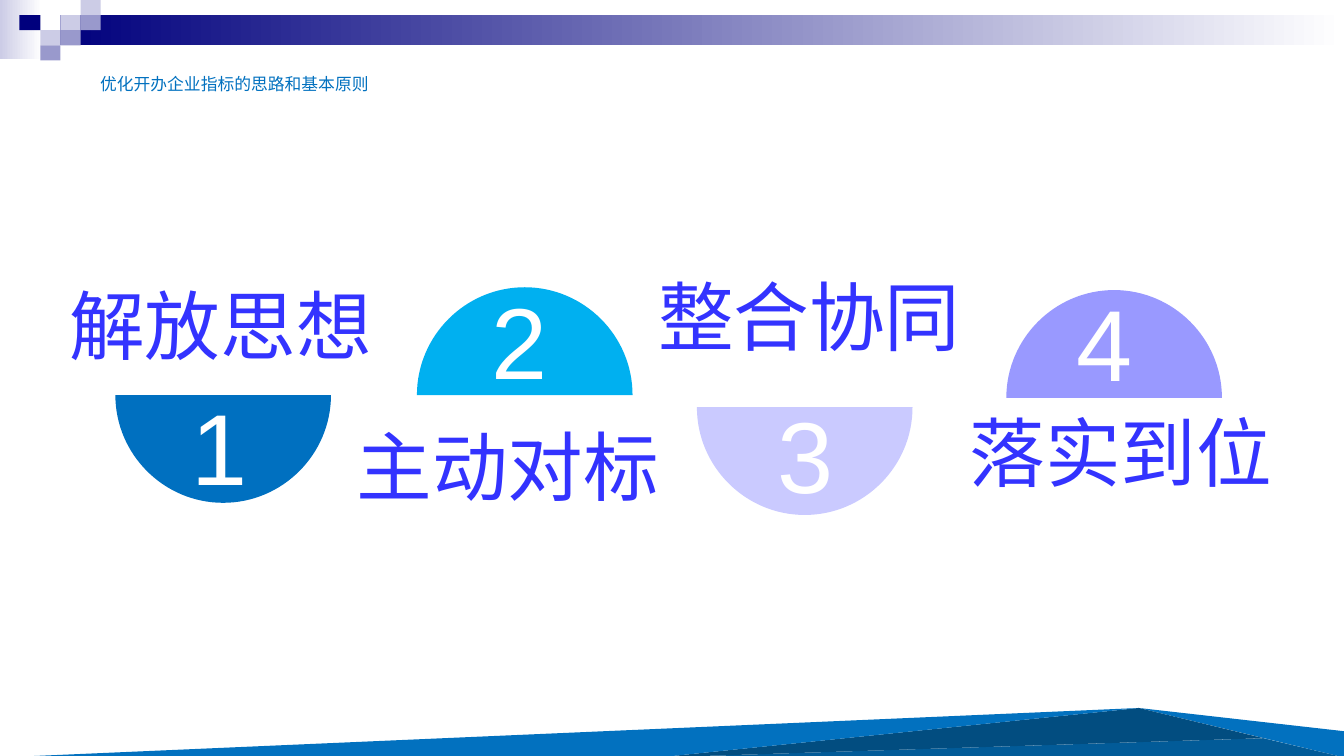
from collections import namedtuple

from lxml import etree
from pptx import Presentation
from pptx.dml.color import RGBColor
from pptx.enum import shapes, text
from pptx.oxml import ns
from pptx.util import Pt

WIDTH, HEIGHT = 960, 540
NAVY = RGBColor(0x00, 0x00, 0x7D)
LAVENDER = RGBColor(0xCC, 0xCC, 0xE6)
VIOLET = RGBColor(0x99, 0x99, 0xCC)
WHITE = RGBColor(0xFF, 0xFF, 0xFF)
RIDGE_BLUE = RGBColor(0x02, 0x71, 0xBF)
RIDGE_MID = RGBColor(0x02, 0x5B, 0x98)
RIDGE_DARK = RGBColor(0x02, 0x4D, 0x80)
LABEL_BLUE = RGBColor(0x33, 0x33, 0xFF)

CJK_FONT, DIGIT_FONT = "Noto Sans CJK SC", "Arial"
RADIUS = 77
ARC_HANDLE = 0.55 * RADIUS

# x, y: left end of the dome's flat edge; offsets are measured from there
Step = namedtuple("Step", "label x y upward color label_offset digit_offset")
STEPS = [
    Step("解放思想", 82.4, 282.2, False, RGBColor(0x00, 0x70, 0xC0),
         (-39.9, -86.6), (47.2, -11)),
    Step("主动对标", 297.8, 282.2, True, RGBColor(0x00, 0xB0, 0xF0),
         (-50.1, 14.2), (46.1, -86.4)),
    Step("整合协同", 497.8, 290.9, False, RGBColor(0xCA, 0xCA, 0xFF),
         (-34.8, -101.8), (50.8, -13.7)),
    Step("落实到位", 718.8, 284.2, True, RGBColor(0x99, 0x99, 0xFF),
         (-33.4, 2.4), (43, -87.6)),
]


def paint(shape, color, end_color=None):
    """Fill flat, or left to right when an end colour is given."""
    shape.shadow.inherit = False
    shape.line.fill.background()
    if end_color is None:
        shape.fill.solid()
        shape.fill.fore_color.rgb = color
        return
    shape.fill.gradient()
    shape.fill.gradient_angle = 0
    for stop, position, tint in zip(shape.fill.gradient_stops, (0, 1), (color, end_color)):
        stop.position = position
        stop.color.rgb = tint


def add_block(parent, x, y, width, height, color, end_color=None):
    block = parent.shapes.add_shape(
        shapes.MSO_SHAPE.RECTANGLE, Pt(x), Pt(y), Pt(width), Pt(height))
    paint(block, color, end_color)


def add_polygon(parent, points, color):
    start, *rest = [(Pt(x), Pt(y)) for x, y in points]
    builder = parent.shapes.build_freeform(*start)
    builder.add_line_segments(rest, close=True)
    polygon = builder.convert_to_shape()
    paint(polygon, color)
    return polygon


def add_dome(parent, x, y, upward, color):
    """Half-disc: a triangle whose two slopes become quarter circles."""
    side = -1 if upward else 1
    dome = add_polygon(parent, [(x, y), (x + 2 * RADIUS, y), (x + RADIUS, y + side * RADIUS)],
                       color)
    flat, apex = (RADIUS, 0) if upward else (0, RADIUS)
    quarters = [
        [(2 * RADIUS, flat + side * ARC_HANDLE), (RADIUS + ARC_HANDLE, apex), (RADIUS, apex)],
        [(RADIUS - ARC_HANDLE, apex), (0, flat + side * ARC_HANDLE), (0, flat)],
    ]
    outline = dome._element.find(".//" + ns.qn("a:path"))
    slope = outline.findall(ns.qn("a:lnTo"))[-1]
    for quarter in quarters:
        curve = etree.Element(ns.qn("a:cubicBezTo"))
        for curve_x, curve_y in quarter:
            etree.SubElement(curve, ns.qn("a:pt"), x=str(int(Pt(curve_x))), y=str(int(Pt(curve_y))))
        slope.addprevious(curve)
    outline.remove(slope)


def add_words(parent, x, y, width, height, words, size, font, color, wrap=False):
    box = parent.shapes.add_textbox(Pt(x), Pt(y), Pt(width), Pt(height))
    frame = box.text_frame
    frame.word_wrap = wrap
    frame.auto_size = text.MSO_AUTO_SIZE.SHAPE_TO_FIT_TEXT
    run = frame.paragraphs[0].add_run()
    run.text = words
    run.font.size = Pt(size)
    run.font.name = font
    run.font.color.rgb = color
    east_asian = etree.SubElement(run.font._element, ns.qn("a:ea"))
    east_asian.set("typeface", font)


def add_header(slide, x, y, width):
    """Fading bar with a mosaic of small tiles at its left end."""
    header = slide.shapes.add_group_shape()
    edges = (0, 13.8, 28.8, 43.2, 57.6, 72)
    tile_h = 10.8
    add_block(header, x, y, 30, 42, LAVENDER, WHITE)
    add_block(header, x + edges[3], y + tile_h, width - edges[3], 2 * tile_h, NAVY, WHITE)
    tiles = [(3, 1, LAVENDER), (4, 0, LAVENDER), (4, 1, VIOLET), (2, 2, LAVENDER),
             (1, 1, NAVY), (3, 2, VIOLET), (2, 3, VIOLET)]
    for column, row, color in tiles:
        add_block(header, x + edges[column], y + row * tile_h,
                  edges[column + 1] - edges[column], tile_h, color)


def add_footer(slide, x, y, width, height):
    """Low ridge of four facets that share a peak and a fold."""
    footer = slide.shapes.add_group_shape()
    right, bottom = x + width, y + height
    peak, fold = (x + 813.5, y), (x + 902.5, y + 21.6)
    foot, corner = (x + 470.5, bottom), (right, bottom)
    add_polygon(footer, [corner, peak, (right, y + 16.6)], RIDGE_BLUE)
    add_polygon(footer, [corner, fold, foot], RIDGE_MID)
    add_polygon(footer, [fold, foot, peak], RIDGE_DARK)
    add_polygon(footer, [peak, (x + 1.5, bottom), foot], RIDGE_BLUE)


def add_step(slide, number, step):
    """Label, half-disc and number of one principle."""
    group = slide.shapes.add_group_shape()
    label_dx, label_dy = step.label_offset
    digit_dx, digit_dy = step.digit_offset
    add_words(group, step.x + label_dx, step.y + label_dy, 232.6, 72.7,
              step.label, 54, CJK_FONT, LABEL_BLUE)
    add_dome(group, step.x, step.y, step.upward, step.color)
    add_words(group, step.x + digit_dx, step.y + digit_dy, 61.2, 94.3,
              str(number), 72, DIGIT_FONT, WHITE)


def main():
    deck = Presentation()
    deck.slide_width, deck.slide_height = Pt(WIDTH), Pt(HEIGHT)
    slide = deck.slides.add_slide(deck.slide_layouts[6])
    add_header(slide, 0, 0, WIDTH)
    add_footer(slide, 0, 505.7, WIDTH, 35.3)
    for number, step in enumerate(STEPS, 1):
        add_step(slide, number, step)
    add_words(slide, 64.4, 49, 219.6, 21.6, "优化开办企业指标的思路和基本原则",
              12, CJK_FONT, RIDGE_BLUE, wrap=True)
    deck.save("out.pptx")


if __name__ == "__main__":
    main()
